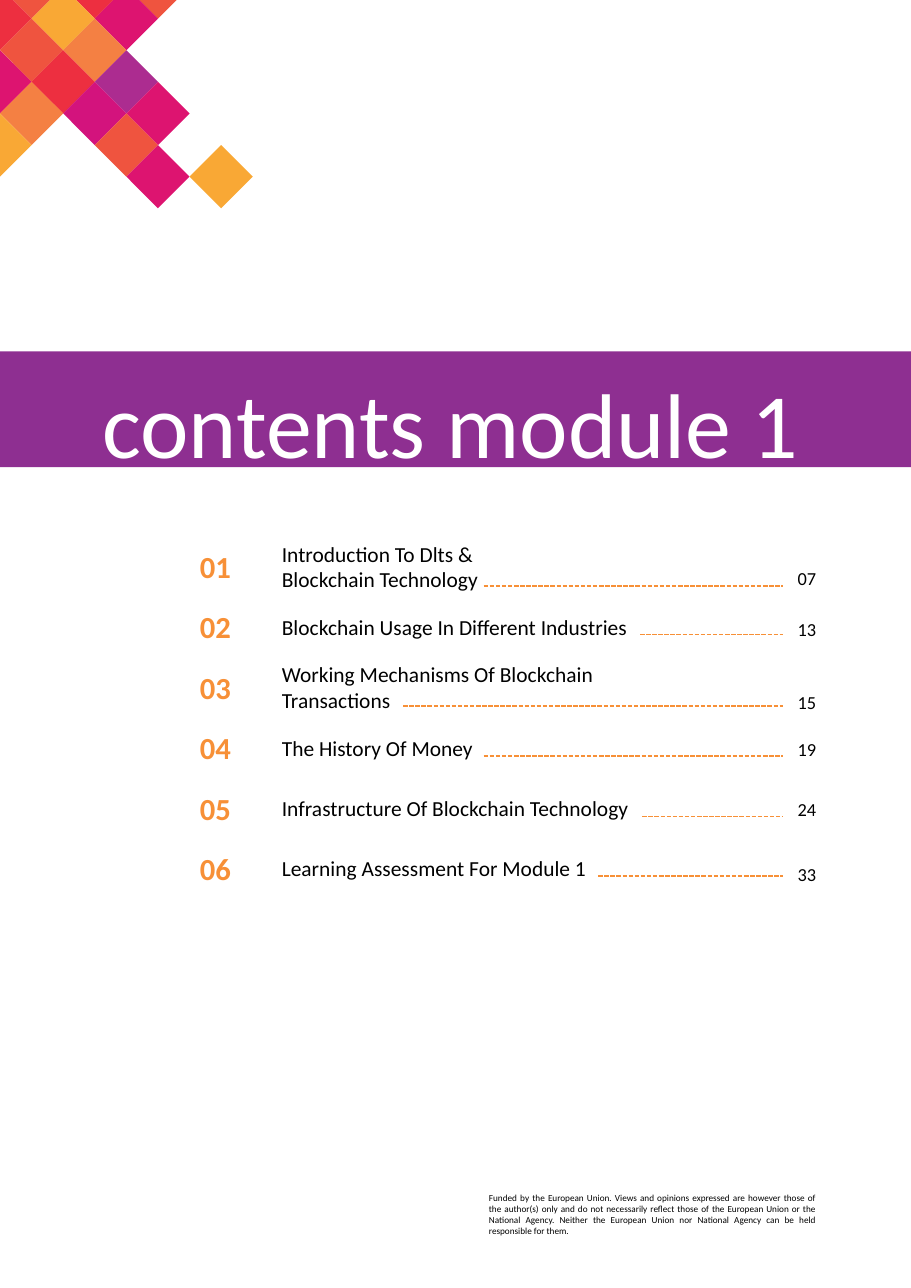
"""Builds the contents page of module 1."""
import pptx
import pptx.dml.color
import pptx.enum.dml
import pptx.enum.shapes
import pptx.enum.text
import pptx.oxml
import pptx.util

Pt = pptx.util.Pt
ALIGN = pptx.enum.text.PP_ALIGN
ANCHOR = pptx.enum.text.MSO_ANCHOR

COLORS = {
    "band": "8E2F91", "accent": "F79037", "ink": "000000", "white": "FFFFFF",
    "red": "ED2F40", "coral": "EF543F", "orange": "F48043", "amber": "F9A835",
    "pink": "DD1470", "magenta": "D3137D", "violet": "AC2C90",
}
FONT = "Calibri"
PAGE_WIDTH, PAGE_HEIGHT = 595.4, 841.7

TILE_HALF = 20.65
TILE_TOP = 12.2
TILES = [
    (1, -1, "coral"), (3, -1, "red"), (5, -1, "coral"),
    (0, 0, "red"), (2, 0, "amber"), (4, 0, "pink"),
    (1, 1, "coral"), (3, 1, "orange"),
    (0, 2, "pink"), (2, 2, "red"), (4, 2, "violet"),
    (1, 3, "orange"), (3, 3, "magenta"), (5, 3, "pink"),
    (0, 4, "amber"), (4, 4, "coral"),
    (5, 5, "pink"), (7, 5, "amber"),
]

ROW_TOP, ROW_PITCH, ROW_HEIGHT = 356.4, 39.45, 27.4
LEADER_END = 511.6
ENTRIES = [
    ("Introduction To Dlts &\nBlockchain Technology", "07", 316.1, 383, 364.3),
    ("Blockchain Usage In Different Industries", "13", 418.3, 414.7, 397.4),
    ("Working Mechanisms Of Blockchain Transactions", "15", 263.5, 461.5, 445),
    ("The History Of Money", "19", 316.1, 493.9, 475.9),
    ("Infrastructure Of Blockchain Technology", "24", 419.8, 533.5, 514.8),
    ("Learning Assessment For Module 1", "33", 391, 572.4, 557.3),
]
FUNDING = (
    "Funded by the European Union. Views and opinions expressed are however "
    "those of the author(s) only and do not necessarily reflect those of the "
    "European Union or the National Agency. Neither the European Union nor "
    "National Agency can be held responsible for them."
)


def rgb(color):
    """Returns the named colour."""
    return pptx.dml.color.RGBColor.from_string(COLORS[color])


def paint(shape, color):
    """Fills a shape flatly, without line or shadow."""
    shape.fill.solid()
    shape.fill.fore_color.rgb = rgb(color)
    shape.line.fill.background()
    shape.shadow.inherit = False


def write(shape, text, size, color, align=ALIGN.LEFT, anchor=ANCHOR.MIDDLE, bold=False):
    """Sets and formats the text of a shape."""
    frame = shape.text_frame
    frame.text = text
    frame.word_wrap = True
    frame.auto_size = pptx.enum.text.MSO_AUTO_SIZE.NONE
    frame.vertical_anchor = anchor
    for paragraph in frame.paragraphs:
        paragraph.alignment = align
        for run in paragraph.runs:
            run.font.name = FONT
            run.font.size = Pt(size)
            run.font.bold = bold
            run.font.color.rgb = rgb(color)


def add_text(slide, left, top, width, height, *args, **kwargs):
    """Adds a formatted text box."""
    box = slide.shapes.add_textbox(Pt(left), Pt(top), Pt(width), Pt(height))
    write(box, *args, **kwargs)


def clip(points, axis):
    """Cuts a polygon off where the given coordinate is negative."""
    kept = []
    for start, end in zip(points, points[1:] + points[:1]):
        if start[axis] >= 0:
            kept.append(start)
        if start[axis] * end[axis] < 0:
            share = start[axis] / (start[axis] - end[axis])
            kept.append(tuple(a + share * (b - a) for a, b in zip(start, end)))
    return kept


def add_tile(slide, column, row, color):
    """Adds one diamond of the mosaic, cut at the page edges."""
    x, y = column * TILE_HALF, TILE_TOP + row * TILE_HALF
    diamond = [(x, y - TILE_HALF), (x + TILE_HALF, y),
               (x, y + TILE_HALF), (x - TILE_HALF, y)]
    corners = [(Pt(a), Pt(b)) for a, b in clip(clip(diamond, 0), 1)]
    outline = slide.shapes.build_freeform(*corners[0])
    outline.add_line_segments(corners[1:], close=True)
    paint(outline.convert_to_shape(), color)


def add_leader(slide, start, y):
    """Adds the dashed line that leads to a page number."""
    leader = slide.shapes.add_connector(
        pptx.enum.shapes.MSO_CONNECTOR.STRAIGHT, Pt(start), Pt(y), Pt(LEADER_END), Pt(y))
    leader.line.color.rgb = rgb("accent")
    leader.line.width = Pt(1)
    leader.line.dash_style = pptx.enum.dml.MSO_LINE.SQUARE_DOT
    leader.element.spPr.append(pptx.oxml.parse_xml(
        '<a:effectLst xmlns:a="http://schemas.openxmlformats.org/drawingml/2006/main"/>'))


def add_entry(slide, index, heading, page, leader_start, leader_y, page_top):
    """Adds one line of the contents."""
    top = ROW_TOP + index * ROW_PITCH
    add_text(slide, 115.2, top, 51.1, ROW_HEIGHT, f"{index + 1:02}", 20, "accent",
             align=ALIGN.CENTER, bold=True)
    add_text(slide, 177.1, top, 279.4, ROW_HEIGHT, heading, 14, "ink")
    add_leader(slide, leader_start, leader_y)
    add_text(slide, 504.5, page_top, 36, ROW_HEIGHT, page, 12, "ink", align=ALIGN.RIGHT)


def add_title(slide):
    """Adds the band and sets the title on it."""
    band = slide.shapes.add_shape(
        pptx.enum.shapes.MSO_SHAPE.RECTANGLE, 0, Pt(229.7), Pt(PAGE_WIDTH), Pt(75.6))
    paint(band, "band")
    title = slide.shapes.title
    title.left, title.top, title.width, title.height = Pt(59.8), Pt(236), Pt(504), Pt(76.3)
    write(title, "contents module 1", 60, "white", anchor=ANCHOR.TOP)
    band.element.addnext(title.element)


def main():
    """Builds and saves the page."""
    deck = pptx.Presentation()
    deck.slide_width, deck.slide_height = Pt(PAGE_WIDTH), Pt(PAGE_HEIGHT)
    slide = deck.slides.add_slide(deck.slide_layouts.get_by_name("Title Only"))
    add_title(slide)
    for tile in TILES:
        add_tile(slide, *tile)
    for index, entry in enumerate(ENTRIES):
        add_entry(slide, index, *entry)
    add_text(slide, 312.5, 775.4, 227.5, 36, FUNDING, 6, "ink",
             align=ALIGN.JUSTIFY, anchor=ANCHOR.TOP)
    deck.save("out.pptx")


if __name__ == "__main__":
    main()
